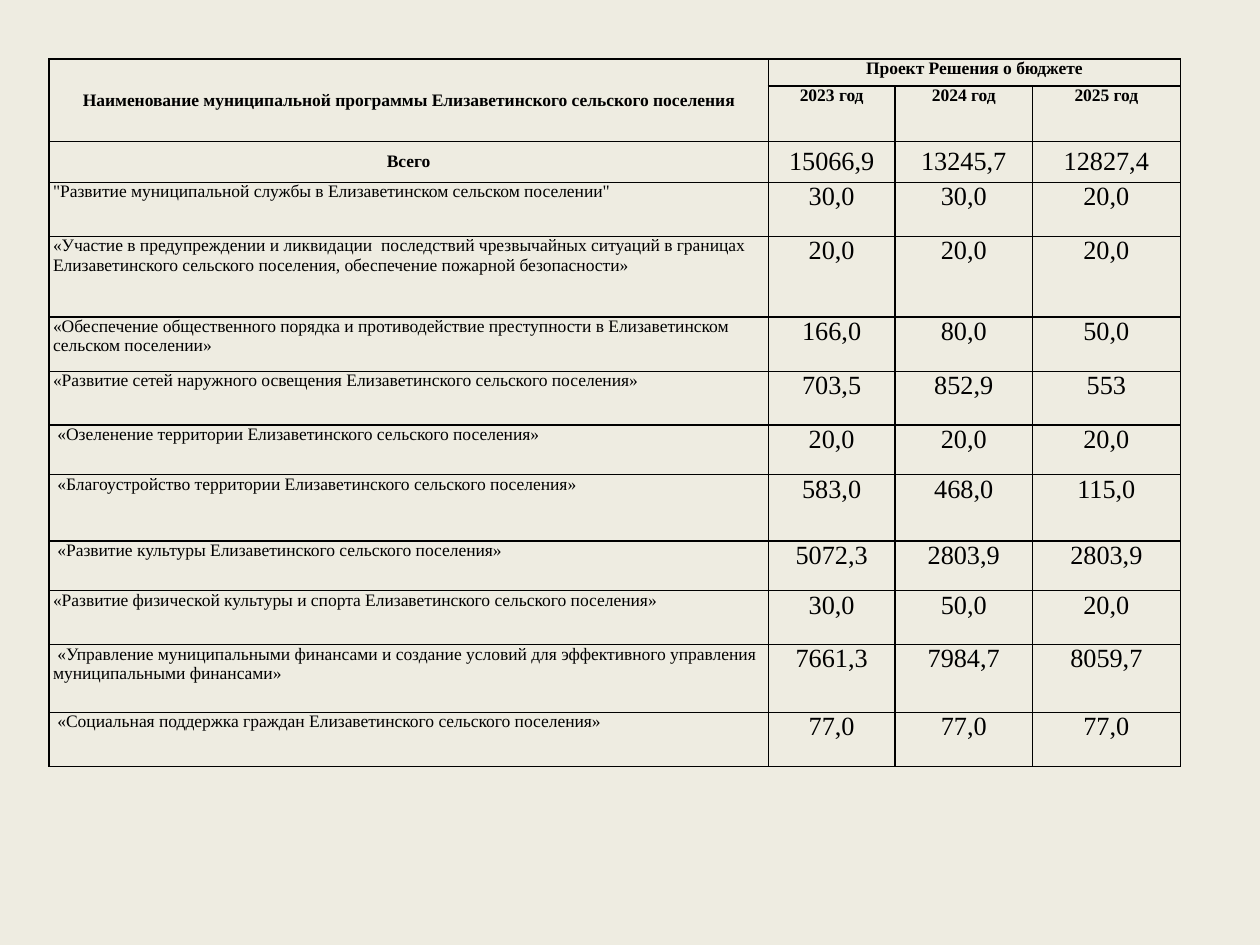
from lxml import etree
from pptx import Presentation
from pptx.dml.color import RGBColor
from pptx.enum import text
from pptx.oxml import ns
from pptx.util import Pt

COLORS = {"background": "EEECE1", "ink": "000000"}
COLUMN_WIDTHS = [411, 72.5, 78.5, 84.5]
ROW_HEIGHTS = [15.5, 31.5, 23.5, 30.8, 46, 31.2, 30.8, 28.3, 38, 28.3, 30.8, 38.8, 30.8]
HEADER = [
    ["Наименование муниципальной программы Елизаветинского сельского поселения",
     "Проект Решения о бюджете", "", ""],
    ["", "2023 год", "2024 год", "2025 год"],
]
TOTAL = ["Всего", "15066,9", "13245,7", "12827,4"]
PROGRAMS = [
    ["\"Развитие муниципальной службы в Елизаветинском сельском поселении\"",
     "30,0", "30,0", "20,0"],
    ["«Участие в предупреждении и ликвидации  последствий чрезвычайных ситуаций в границах "
     "Елизаветинского сельского поселения, обеспечение пожарной безопасности»",
     "20,0", "20,0", "20,0"],
    ["«Обеспечение общественного порядка и противодействие преступности в Елизаветинском "
     "сельском поселении»", "166,0", "80,0", "50,0"],
    ["«Развитие сетей наружного освещения Елизаветинского сельского поселения»",
     "703,5", "852,9", "553"],
    [" «Озеленение территории Елизаветинского сельского поселения»", "20,0", "20,0", "20,0"],
    [" «Благоустройство территории Елизаветинского сельского поселения»",
     "583,0", "468,0", "115,0"],
    [" «Развитие культуры Елизаветинского сельского поселения»",
     "5072,3", "2803,9", "2803,9"],
    ["«Развитие физической культуры и спорта Елизаветинского сельского поселения»",
     "30,0", "50,0", "20,0"],
    [" «Управление муниципальными финансами и создание условий для эффективного управления "
     "муниципальными финансами»", "7661,3", "7984,7", "8059,7"],
    [" «Социальная поддержка граждан Елизаветинского сельского поселения»",
     "77,0", "77,0", "77,0"],
]


class SlideBuilder:
    font = "Times New Roman"
    label_size = 10
    value_size = 15
    border_width = 1
    side_margin = 2.3

    def __init__(self, slide):
        self.slide = slide

    def background(self):
        fill = self.slide.background.fill
        fill.solid()
        fill.fore_color.rgb = RGBColor.from_string(COLORS["background"])

    def table(self, left, top, widths, heights):
        frame = self.slide.shapes.add_table(
            len(heights), len(widths), Pt(left), Pt(top), Pt(sum(widths)), Pt(sum(heights)))
        table = frame.table
        table.first_row = table.horz_banding = False
        for column, width in zip(table.columns, widths):
            column.width = Pt(width)
        for row, height in zip(table.rows, heights):
            row.height = Pt(height)
        return table

    def borders(self, cell):
        properties = cell._tc.get_or_add_tcPr()
        for side in ("lnL", "lnR", "lnT", "lnB"):
            line = etree.SubElement(properties, ns.qn(f"a:{side}"), w=str(Pt(self.border_width)))
            fill = etree.SubElement(line, ns.qn("a:solidFill"))
            etree.SubElement(fill, ns.qn("a:srgbClr"), val=COLORS["ink"])

    def cell(self, cell, content, size, bold, centered, middle):
        cell.margin_left = cell.margin_right = Pt(self.side_margin)
        cell.margin_top = cell.margin_bottom = 0
        cell.vertical_anchor = text.MSO_ANCHOR.MIDDLE if middle else text.MSO_ANCHOR.TOP
        self.borders(cell)
        cell.fill.background()
        if not content:
            return
        paragraph = cell.text_frame.paragraphs[0]
        paragraph.alignment = text.PP_ALIGN.CENTER if centered else text.PP_ALIGN.LEFT
        run = paragraph.add_run()
        run.text = content
        run.font.name = self.font
        run.font.size = Pt(size)
        run.font.bold = bold
        run.font.color.rgb = RGBColor.from_string(COLORS["ink"])

    def budget_table(self, left, top):
        table = self.table(left, top, COLUMN_WIDTHS, ROW_HEIGHTS)
        total_row = len(HEADER)
        for r, row in enumerate([*HEADER, TOTAL, *PROGRAMS]):
            for c, content in enumerate(row):
                is_value = r >= total_row and c > 0
                self.cell(
                    table.cell(r, c), content,
                    size=self.value_size if is_value else self.label_size,
                    bold=r <= total_row and not is_value,
                    centered=r <= total_row or c > 0,
                    middle=r == total_row or (r, c) == (0, 0))
        table.cell(0, 0).merge(table.cell(1, 0))
        table.cell(0, 1).merge(table.cell(0, 3))


def main():
    presentation = Presentation()
    presentation.slide_width = Pt(720)
    presentation.slide_height = Pt(540)
    builder = SlideBuilder(presentation.slides.add_slide(presentation.slide_layouts[6]))
    builder.background()
    builder.budget_table(28, 33.8)
    presentation.save("out.pptx")


if __name__ == "__main__":
    main()
